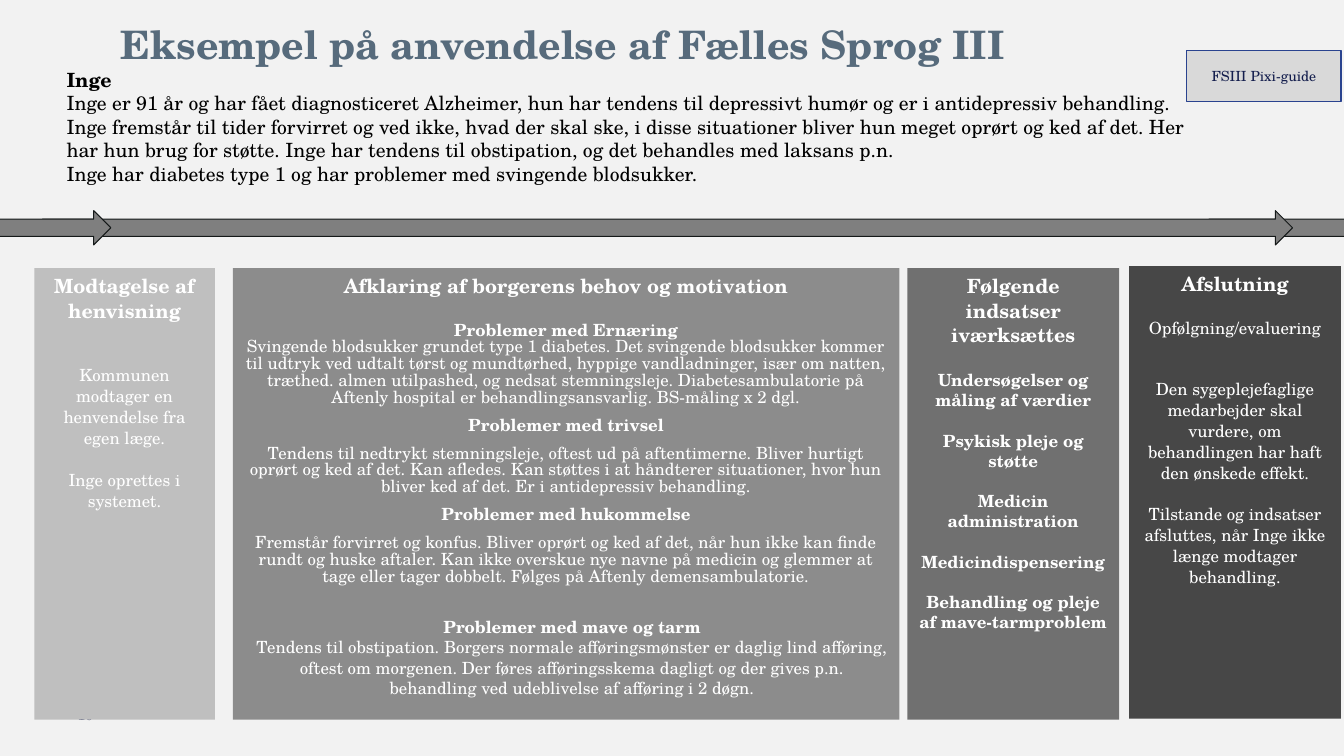
from dataclasses import dataclass

from pptx import Presentation
from pptx.dml.color import RGBColor
from pptx.enum.shapes import MSO_SHAPE
from pptx.enum.text import MSO_ANCHOR, PP_ALIGN
from pptx.util import Inches, Pt

RECTANGLE, RIGHT_ARROW = MSO_SHAPE.RECTANGLE, MSO_SHAPE.RIGHT_ARROW
TOP, MIDDLE = MSO_ANCHOR.TOP, MSO_ANCHOR.MIDDLE
LEFT, CENTER = PP_ALIGN.LEFT, PP_ALIGN.CENTER


@dataclass(frozen=True)
class Theme:
    font: str = "TeX Gyre Schola"
    background: str = "F2F2F2"
    title: str = "576B7C"
    ink: str = "141E4D"
    black: str = "000000"
    white: str = "FFFFFF"
    guide_fill: str = "D9D9D9"
    guide_line: str = "2A438F"
    arrow_fill: str = "7F7F7F"
    arrow_line: str = "151919"
    title_size: int = 28
    heading_size: int = 14
    body_size: int = 12
    small_size: int = 10
    loose: float = 1.04


THEME = Theme()


@dataclass(frozen=True)
class Line:
    text: str
    size: int = THEME.body_size
    bold: bool = False
    spacing: object = None
    before: float = 0
    after: float = 0
    indent: float = 0


def heading(text):
    return Line(text, THEME.heading_size, True, THEME.loose)


def loose(text, before=0, bold=False):
    return Line(text, bold=bold, spacing=THEME.loose, before=before)


def tight(text, bold=False):
    return Line(text, bold=bold, spacing=Pt(12), after=8)


def indented(text, before=0, bold=False):
    return Line(text, bold=bold, before=before, indent=0.12)


def action(text, before=14.4):
    return Line(text, bold=True, before=before)


# Panels: left, top, width, height, fill, lines
PANELS = [
    (0.34, 2.66, 1.79, 4.48, "BFBFBF", [
        heading("Modtagelse af henvisning"),
        loose("Kommunen modtager en henvendelse fra egen læge.", 30),
        loose("Inge oprettes i systemet.", 15),
    ]),
    (2.31, 2.66, 6.61, 4.48, "8C8C8C", [
        heading("Afklaring af borgerens behov og motivation"),
        loose("Problemer med Ernæring", 15, bold=True),
        tight("Svingende blodsukker grundet type 1 diabetes. Det svingende blodsukker kommer "
              "til udtryk ved udtalt tørst og mundtørhed, hyppige vandladninger, især om natten, "
              "træthed. almen utilpashed, og nedsat stemningsleje. Diabetesambulatorie på "
              "Aftenly hospital er behandlingsansvarlig. BS-måling x 2 dgl."),
        tight("Problemer med trivsel", bold=True),
        tight("Tendens til nedtrykt stemningsleje, oftest ud på aftentimerne. Bliver hurtigt "
              "oprørt og ked af det. Kan afledes. Kan støttes i at håndterer situationer, hvor "
              "hun bliver ked af det. Er i antidepressiv behandling."),
        tight("Problemer med hukommelse", bold=True),
        tight("Fremstår forvirret og konfus. Bliver oprørt og ked af det, når hun ikke kan finde "
              "rundt og huske aftaler. Kan ikke overskue nye navne på medicin og glemmer at "
              "tage eller tager dobbelt. Følges på Aftenly demensambulatorie."),
        indented("Problemer med mave og tarm", 14.4, bold=True),
        indented("Tendens til obstipation. Borgers normale afføringsmønster er daglig lind "
                 "afføring, oftest om morgenen. Der føres afføringsskema dagligt og der gives "
                 "p.n. behandling ved udeblivelse af afføring i 2 døgn."),
    ]),
    (9, 2.66, 2.1, 4.48, "707070", [
        heading("Følgende indsatser iværksættes"),
        action("Undersøgelser og måling af værdier", 16.8),
        action("Psykisk pleje og støtte"),
        action("Medicin"),
        action("administration", 0),
        action("Medicindispensering"),
        action("Behandling og pleje af mave-tarmproblem"),
    ]),
    (11.2, 2.64, 2.1, 4.49, "474747", [
        heading("Afslutning"),
        loose("Opfølgning/evaluering", 15),
        loose("Den sygeplejefaglige medarbejder skal vurdere, om behandlingen har haft "
              "den ønskede effekt.", 28.7),
        loose("Tilstande og indsatser afsluttes, når Inge ikke længe modtager behandling.", 15),
    ]),
]

INTRO = [
    Line("Inge", THEME.heading_size, True),
    Line("Inge er 91 år og har fået diagnosticeret Alzheimer, hun har tendens til depressivt "
         "humør og er i antidepressiv behandling. Inge fremstår til tider forvirret og ved ikke, "
         "hvad der skal ske, i disse situationer bliver hun meget oprørt og ked af det. Her har "
         "hun brug for støtte. Inge har tendens til obstipation, og det behandles med "
         "laksans p.n.", THEME.heading_size),
    Line("Inge har diabetes type 1 og har problemer med svingende blodsukker.",
         THEME.heading_size),
]

# Arrows from back to front: left, width
ARROWS = [(11.99, 2.41), (0.42, 12.4), (-0.54, 1.64)]


def color(value):
    return RGBColor.from_string(value)


def write(frame, lines, text_color, align=LEFT, anchor=TOP, inset=True):
    frame.word_wrap = True
    frame.vertical_anchor = anchor
    if not inset:
        frame.margin_left = frame.margin_right = Inches(0)
        frame.margin_top = frame.margin_bottom = Inches(0)
    for index, line in enumerate(lines):
        paragraph = frame.add_paragraph() if index else frame.paragraphs[0]
        paragraph.text = line.text
        paragraph.alignment = align
        paragraph.space_before = Pt(line.before)
        paragraph.space_after = Pt(line.after)
        if line.spacing:
            paragraph.line_spacing = line.spacing
        if line.indent:
            properties = paragraph._p.get_or_add_pPr()
            properties.set("marL", str(Inches(line.indent)))
            properties.set("indent", "0")
        paragraph.font.name = THEME.font
        paragraph.font.size = Pt(line.size)
        paragraph.font.bold = line.bold
        paragraph.font.color.rgb = color(text_color)


def add_title(slide, line):
    title = slide.shapes.title
    title.left, title.top = Inches(1.2), Inches(0.15)
    title.width, title.height = Inches(10.93), Inches(0.62)
    write(title.text_frame, [line], THEME.title, anchor=MIDDLE, inset=False)


def add_text(slide, box, lines, text_color, anchor=TOP):
    text_box = slide.shapes.add_textbox(*map(Inches, box))
    write(text_box.text_frame, lines, text_color, anchor=anchor, inset=False)


def add_block(slide, kind, box, fill, line=None, line_width=1):
    shape = slide.shapes.add_shape(kind, *map(Inches, box))
    shape.shadow.inherit = False
    shape.fill.solid()
    shape.fill.fore_color.rgb = color(fill)
    if line:
        shape.line.color.rgb = color(line)
        shape.line.width = Pt(line_width)
    else:
        shape.line.fill.background()
    return shape


def main():
    presentation = Presentation()
    presentation.slide_width, presentation.slide_height = Inches(13.33), Inches(7.5)
    slide = presentation.slides.add_slide(presentation.slide_layouts[5])
    slide.background.fill.solid()
    slide.background.fill.fore_color.rgb = color(THEME.background)

    # Title, page number and case story
    add_title(slide, Line("Eksempel på anvendelse af Fælles Sprog III",
                          THEME.title_size, True, 0.9))
    add_text(slide, (0.77, 6.89, 3, 0.4), [Line("10", THEME.small_size)], THEME.ink, MIDDLE)
    add_text(slide, (0.66, 0.67, 11.12, 1.18), INTRO, THEME.black)

    # Guide button
    guide = add_block(slide, RECTANGLE, (11.77, 0.5, 1.53, 0.51),
                      THEME.guide_fill, THEME.guide_line)
    write(guide.text_frame, [Line("FSIII Pixi-guide", THEME.small_size)],
          THEME.ink, CENTER, MIDDLE)

    # Process panels
    for *box, fill, lines in PANELS:
        panel = add_block(slide, RECTANGLE, box, fill)
        write(panel.text_frame, lines, THEME.white, CENTER)

    # Process arrows
    for left, width in ARROWS:
        add_block(slide, RIGHT_ARROW, (left, 2.09, width, 0.34),
                  THEME.arrow_fill, THEME.arrow_line, 0.75)

    presentation.save("out.pptx")


if __name__ == "__main__":
    main()
